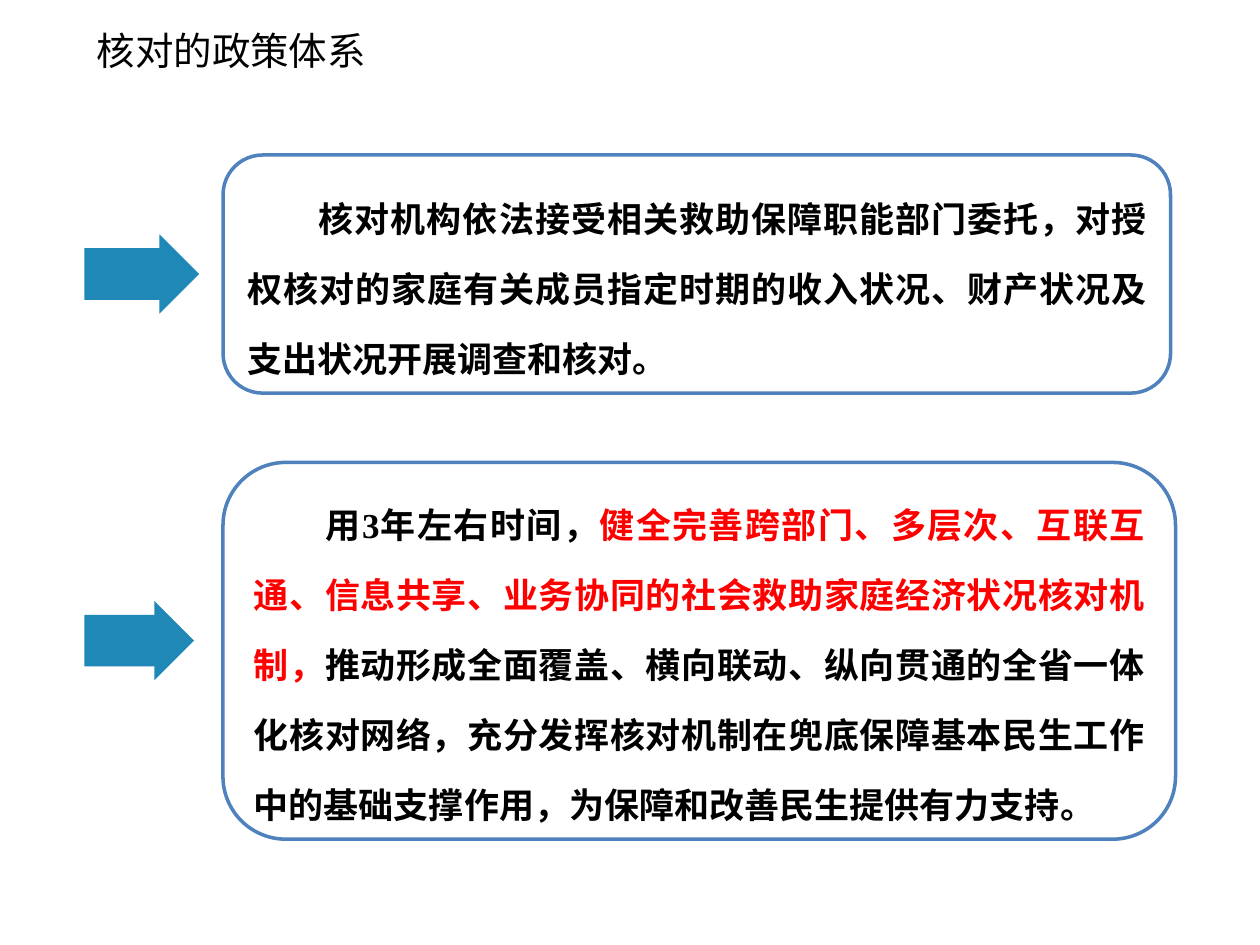
import pptx
import pptx.util
import pptx.dml.color
import pptx.enum.shapes
import pptx.enum.text

Inches = pptx.util.Inches
Pt = pptx.util.Pt
SHAPES = pptx.enum.shapes.MSO_SHAPE
ALIGN = pptx.enum.text.PP_ALIGN
ANCHOR = pptx.enum.text.MSO_ANCHOR

BLACK, RED, OUTLINE, ARROW = "000000", "FF0000", "4F81BD", "1F88B7"


def color(hex_text):
    return pptx.dml.color.RGBColor.from_string(hex_text)


class SlideBuilder:
    """Holds the text style and the slide being filled."""

    font = "Calibri"
    title_size = 22
    body_size = 20
    line_spacing = 40
    first_line_indent = 0.57

    def __init__(self, slide):
        self.slide = slide

    def add_spans(self, para, spans, size, font, bold=False):
        for text, ink in spans:
            span = para.add_run()
            span.text = text
            span.font.name = font
            span.font.size = Pt(size)
            span.font.bold = bold
            span.font.color.rgb = color(ink)

    def shape(self, kind, left, top, width, height):
        shape = self.slide.shapes.add_shape(
            kind, Inches(left), Inches(top), Inches(width), Inches(height))
        shape.shadow.inherit = False
        return shape

    def title(self, text, left, top, width, height):
        box = self.slide.shapes.add_textbox(
            Inches(left), Inches(top), Inches(width), Inches(height))
        frame = box.text_frame
        frame.word_wrap = True
        frame.vertical_anchor = ANCHOR.MIDDLE
        self.add_spans(frame.paragraphs[0], [(text, BLACK)], self.title_size, self.font)

    def panel(self, spans, left, top, width, height, font):
        box = self.shape(SHAPES.ROUNDED_RECTANGLE, left, top, width, height)
        box.fill.background()
        box.line.color.rgb = color(OUTLINE)
        box.line.width = Pt(2)
        frame = box.text_frame
        frame.word_wrap = True
        frame.vertical_anchor = ANCHOR.MIDDLE
        para = frame.paragraphs[0]
        para.alignment = ALIGN.JUSTIFY
        para.line_spacing = Pt(self.line_spacing)
        properties = para._p.get_or_add_pPr()
        properties.set("marL", "0")
        properties.set("indent", str(Inches(self.first_line_indent)))
        self.add_spans(para, spans, self.body_size, font, bold=True)

    def arrow(self, left, top, width, height):
        arrow = self.shape(SHAPES.RIGHT_ARROW, left, top, width, height)
        arrow.adjustments[0] = 0.65
        arrow.adjustments[1] = 0.5
        arrow.fill.solid()
        arrow.fill.fore_color.rgb = color(ARROW)
        arrow.line.fill.background()


def main():
    deck = pptx.Presentation()
    deck.slide_width = Inches(10)
    deck.slide_height = Inches(7.5)
    builder = SlideBuilder(deck.slides.add_slide(deck.slide_layouts[6]))

    # Title
    builder.title("核对的政策体系", 0.67, 0.08, 7.67, 0.64)

    # Duty of the checking body
    builder.panel(
        [("核对机构依法接受相关救助保障职能部门委托，对授权核对的家庭有关成员"
          "指定时期的收入状况、财产状况及支出状况开展调查和核对。", BLACK)],
        1.77, 1.23, 7.52, 1.89, "Calibri")
    builder.arrow(0.67, 1.86, 0.91, 0.63)

    # Three-year goal
    builder.panel(
        [("用3年左右时间，", BLACK),
         ("健全完善跨部门、多层次、互联互通、信息共享、业务协同的"
          "社会救助家庭经济状况核对机制，", RED),
         ("推动形成全面覆盖、横向联动、纵向贯通的全省一体化核对网络，"
          "充分发挥核对机制在兜底保障基本民生工作中的基础支撑作用，"
          "为保障和改善民生提供有力支持。", BLACK)],
        1.77, 3.67, 7.56, 2.99, "Times New Roman")
    builder.arrow(0.67, 4.77, 0.87, 0.63)

    deck.save("out.pptx")


if __name__ == "__main__":
    main()
